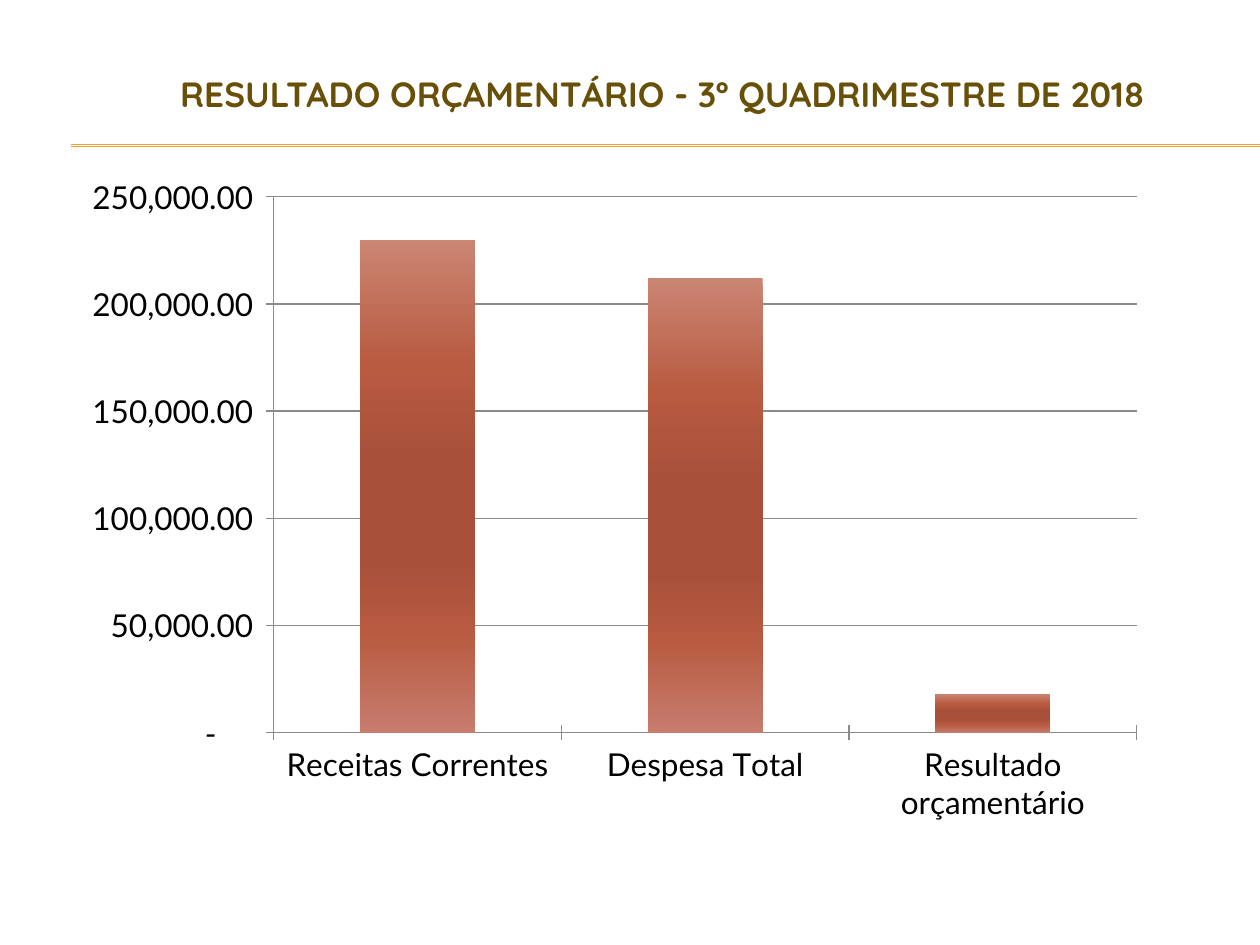
from copy import deepcopy
from typing import NamedTuple

from lxml.etree import SubElement
from pptx import Presentation
from pptx.chart.data import CategoryChartData
from pptx.dml.color import RGBColor
from pptx.enum.chart import XL_CHART_TYPE, XL_TICK_MARK
from pptx.enum.text import MSO_ANCHOR, PP_ALIGN
from pptx.oxml import parse_xml
from pptx.oxml.ns import nsdecls, qn
from pptx.util import Inches, Pt

WIDTH, HEIGHT = Inches(10), Inches(7.5)
GOLD, BROWN, BLACK, GREY = "F0A22E", "695008", "000000", "8B8B8B"
BAR_STOPS = {0: "CB8573", 25: "B85B41", 45: "A8503A", 65: "A8503A",
             80: "B85B41", 100: "C77C6E"}


class Box(NamedTuple):
    """Position and size as shares of the slide."""
    left: float
    top: float
    width: float
    height: float

    def lengths(self) -> tuple[int, int, int, int]:
        return (int(self.left * WIDTH), int(self.top * HEIGHT),
                int(self.width * WIDTH), int(self.height * HEIGHT))


class Result(NamedTuple):
    label: str
    amount: int


TITLE_BOX = Box(0.133, 0.041, 0.966, 0.116)
CHART_BOX = Box(0.062, 0.156, 0.867, 0.781)
PLOT_SHARES = {"x": 0.179, "y": 0.067, "w": 0.79, "h": 0.726}
RULE_LEFT, RULE_TOPS = 0.056, (0.153, 0.155)
RESULTS = (
    Result("Receitas Correntes", 230000),
    Result("Despesa Total", 212000),
    Result("Resultado orçamentário", 18000),
)


def rgb(value: str) -> RGBColor:
    return RGBColor.from_string(value)


def apply_format(target, values: dict) -> None:
    for name, value in values.items():
        setattr(target, name, value)


def add_title(slide, text: str) -> None:
    title = slide.shapes.title
    apply_format(title, dict(zip(("left", "top", "width", "height"), TITLE_BOX.lengths())))
    apply_format(title.text_frame, {"text": text, "word_wrap": True,
                                    "vertical_anchor": MSO_ANCHOR.MIDDLE})
    paragraph = title.text_frame.paragraphs[0]
    paragraph.alignment = PP_ALIGN.LEFT
    font = paragraph.runs[0].font
    apply_format(font, {"name": "Quicksand", "size": Pt(20), "bold": True})
    font.color.rgb = rgb(BROWN)


def add_rule(slide, top: float) -> None:
    y = int(top * HEIGHT)
    rule = slide.shapes.add_connector(1, int(RULE_LEFT * WIDTH), y, WIDTH, y)
    rule.line.color.rgb = rgb(GOLD)
    rule.line.width = Pt(0.75)
    SubElement(rule.element.spPr, qn("a:effectLst"))


def shade_bars(series) -> None:
    fill = series.format.fill
    fill.gradient()
    fill.gradient_angle = 270
    stop_list = series.format.fill.gradient_stops[0]._gs.getparent()
    template = deepcopy(stop_list[0])
    for stop in list(stop_list)[2:]:
        stop_list.remove(stop)
    while len(stop_list) < len(BAR_STOPS):
        stop_list.append(deepcopy(template))
    for stop, (percent, color) in zip(fill.gradient_stops, BAR_STOPS.items()):
        stop.color.rgb = rgb(color)
        stop.position = percent / 100


def place_plot(chart) -> None:
    plot_area = chart._chartSpace.chart.plotArea
    for layout in plot_area.findall(qn("c:layout")):
        plot_area.remove(layout)
    modes = "".join(f'<c:{axis}Mode val="edge"/>' for axis in "xy")
    shares = "".join(f'<c:{side} val="{share}"/>' for side, share in PLOT_SHARES.items())
    plot_area.insert(0, parse_xml(
        f'<c:layout {nsdecls("c")}><c:manualLayout><c:layoutTarget val="inner"/>'
        f'{modes}{shares}</c:manualLayout></c:layout>'))


def add_results_chart(slide) -> None:
    data = CategoryChartData()
    data.categories = [result.label for result in RESULTS]
    data.add_series("Series 1", [result.amount for result in RESULTS])
    chart = slide.shapes.add_chart(
        XL_CHART_TYPE.COLUMN_CLUSTERED, *CHART_BOX.lengths(), data).chart
    apply_format(chart, {"has_legend": False, "has_title": False})
    apply_format(chart.font, {"name": "Lato", "size": Pt(18)})
    chart.font.color.rgb = rgb(BLACK)

    bars = chart.plots[0]
    apply_format(bars, {"gap_width": 150, "vary_by_categories": False})
    shade_bars(bars.series[0])

    amounts = chart.value_axis
    apply_format(amounts, {"minimum_scale": 0, "maximum_scale": 250000,
                           "major_unit": 50000, "has_major_gridlines": True})
    apply_format(amounts.tick_labels, {
        "number_format": '#,##0.00_-;-#,##0.00_-;"-"??_-',
        "number_format_is_linked": False})
    for axis in (chart.category_axis, amounts):
        axis.major_tick_mark = XL_TICK_MARK.CROSS
    for part in (chart.category_axis, amounts, amounts.major_gridlines):
        part.format.line.color.rgb = rgb(GREY)
        part.format.line.width = Pt(0.75)
    place_plot(chart)


def main() -> None:
    deck = Presentation()
    apply_format(deck, {"slide_width": WIDTH, "slide_height": HEIGHT})
    slide = deck.slides.add_slide(deck.slide_layouts[5])
    for top in RULE_TOPS:
        add_rule(slide, top)
    add_title(slide, "RESULTADO ORÇAMENTÁRIO - 3º QUADRIMESTRE DE 2018")
    add_results_chart(slide)
    deck.save("out.pptx")


if __name__ == "__main__":
    main()
